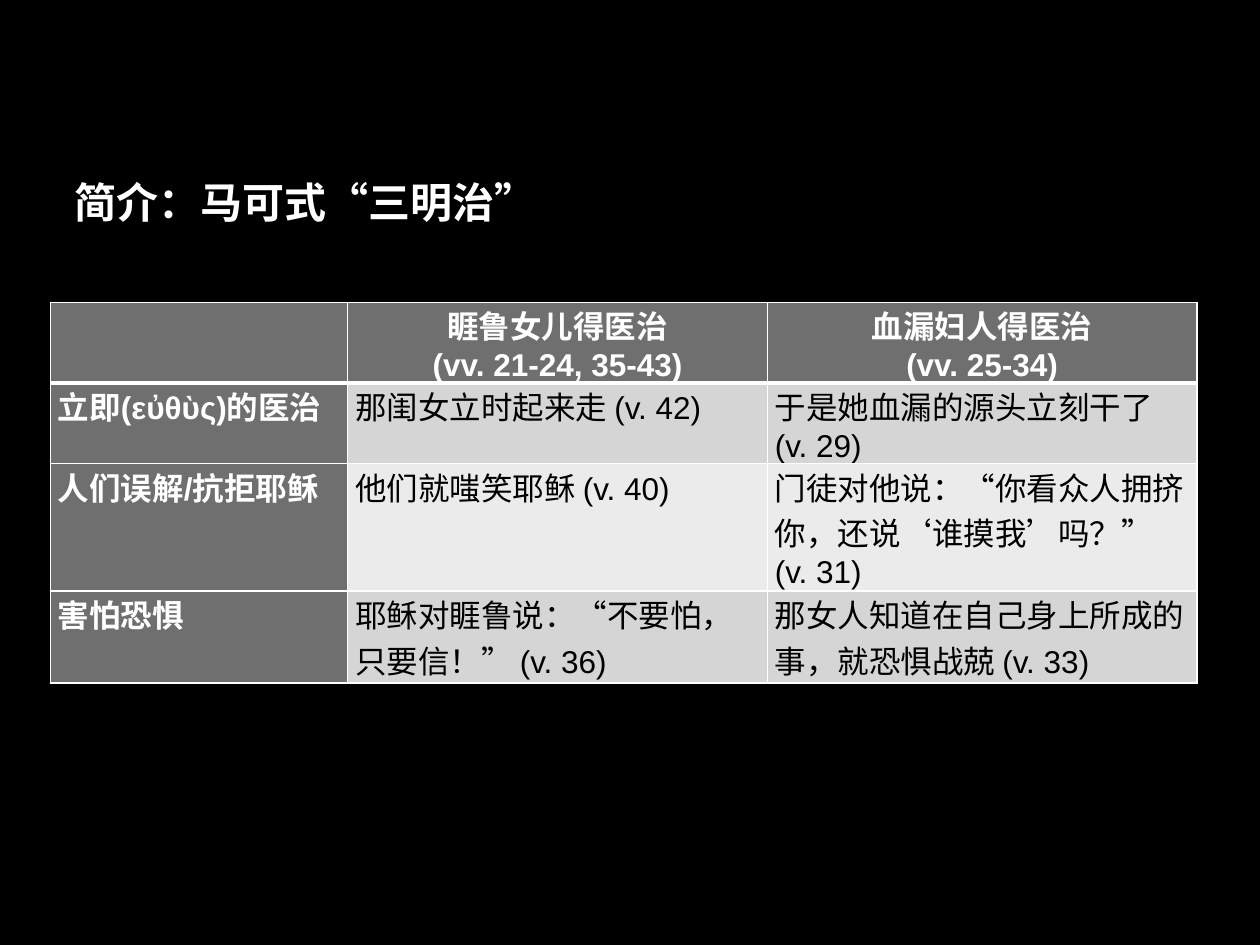
"""Build the slide comparing the two healings in a Markan sandwich."""
from lxml.etree import SubElement
from pptx import Presentation
from pptx.dml.color import RGBColor
from pptx.enum.text import MSO_ANCHOR, PP_ALIGN
from pptx.oxml.ns import qn
from pptx.util import Inches, Pt

TITLE = "简介：马可式“三明治”"
ROWS = [
    ["", "睚鲁女儿得医治\n(vv. 21-24, 35-43)", "血漏妇人得医治\n(vv. 25-34)"],
    ["立即(εὐθὺς)的医治", "那闺女立时起来走 (v. 42)", "于是她血漏的源头立刻干了 (v. 29)"],
    ["人们误解/抗拒耶稣", "他们就嗤笑耶稣 (v. 40)",
     "门徒对他说：“你看众人拥挤你，还说‘谁摸我’吗？” (v. 31)"],
    ["害怕恐惧", "耶稣对睚鲁说：“不要怕，只要信！” (v. 36)",
     "那女人知道在自己身上所成的事，就恐惧战兢 (v. 33)"],
]
COLUMN_WIDTHS = [2.36, 3.33, 3.41]
ROW_HEIGHTS = [0.64, 0.64, 1.01, 0.73]

BLACK = RGBColor(0x00, 0x00, 0x00)
WHITE = RGBColor(0xFF, 0xFF, 0xFF)
HEADER_GRAY = RGBColor(0x6F, 0x6F, 0x6F)
BAND_GRAYS = [RGBColor(0xEB, 0xEB, 0xEB), RGBColor(0xD5, 0xD5, 0xD5)]


def format_font(font, name, size, color, bold):
    font.name = name
    font.size = Pt(size)
    font.color.rgb = color
    font.bold = bold


def add_borders(cell, widths):
    properties = cell._tc.get_or_add_tcPr()
    for side, width in widths.items():
        line = SubElement(properties, qn(f"a:ln{side}"), w=str(Pt(width)))
        fill = SubElement(line, qn("a:solidFill"))
        SubElement(fill, qn("a:srgbClr"), val=str(WHITE))


def add_title(slide):
    title = slide.shapes.add_textbox(Inches(0.49), Inches(1.22), Inches(8.12), Inches(0.76))
    frame = title.text_frame
    frame.word_wrap = True
    frame.vertical_anchor = MSO_ANCHOR.MIDDLE
    frame.text = TITLE
    format_font(frame.paragraphs[0].runs[0].font, "TeX Gyre Adventor", 24, WHITE, True)


def fill_cell(cell, text, row, column):
    is_header = row == 0 or column == 0
    add_borders(cell, {"L": 1, "R": 1, "T": 3 if row == 1 else 1, "B": 3 if row == 0 else 1})
    cell.fill.solid()
    cell.fill.fore_color.rgb = HEADER_GRAY if is_header else BAND_GRAYS[row % 2]
    cell.margin_left = cell.margin_right = Inches(0.06)
    cell.margin_top = cell.margin_bottom = 0
    cell.text_frame.text = text
    for paragraph in cell.text_frame.paragraphs:
        paragraph.alignment = PP_ALIGN.CENTER if row == 0 else PP_ALIGN.LEFT
        for run in paragraph.runs:
            format_font(run.font, "Arial", 18, WHITE if is_header else BLACK, is_header)


def add_comparison_table(slide):
    frame = slide.shapes.add_table(
        len(ROWS), len(COLUMN_WIDTHS), Inches(0.4), Inches(2.4),
        Inches(sum(COLUMN_WIDTHS)), Inches(sum(ROW_HEIGHTS)))
    table = frame.table
    table.first_col = True
    for column, width in zip(table.columns, COLUMN_WIDTHS):
        column.width = Inches(width)
    for row, height in zip(table.rows, ROW_HEIGHTS):
        row.height = Inches(height)
    for row, texts in enumerate(ROWS):
        for column, text in enumerate(texts):
            fill_cell(table.cell(row, column), text, row, column)


def main():
    presentation = Presentation()
    presentation.slide_width = Inches(10)
    presentation.slide_height = Inches(7.5)
    slide = presentation.slides.add_slide(presentation.slide_layouts[6])
    slide.background.fill.solid()
    slide.background.fill.fore_color.rgb = BLACK
    add_title(slide)
    add_comparison_table(slide)
    presentation.save("out.pptx")


if __name__ == "__main__":
    main()
